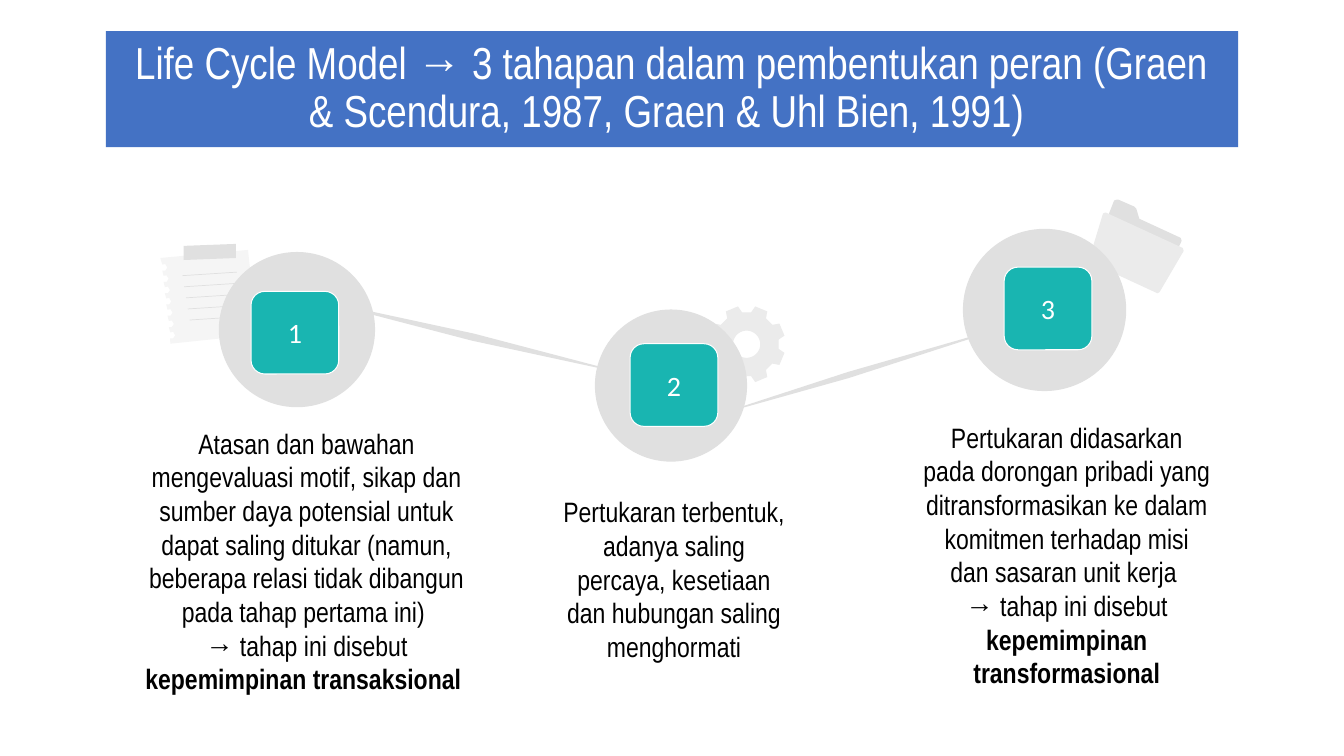
from dataclasses import dataclass
from math import cos, pi, radians, sin

from lxml.etree import SubElement
from pptx import Presentation
from pptx.dml.color import RGBColor
from pptx.enum.shapes import MSO_CONNECTOR, MSO_SHAPE as Preset
from pptx.enum.text import MSO_ANCHOR as Anchor, PP_ALIGN as Align
from pptx.oxml.ns import qn
from pptx.shapes.autoshape import Shape
from pptx.slide import Slide
from pptx.text.text import TextFrame
from pptx.util import Inches, Pt

Point = tuple[float, float]
Box = tuple[float, float, float, float]
Line = tuple[str, str]  # regular text, then bold text


@dataclass(frozen=True)
class Theme:
    banner: str = "4472C4"
    badge: str = "19B5B1"
    grey: str = "E0E0E0"
    light: str = "EBEBEB"
    paper: str = "F5F5F5"
    white: str = "FFFFFF"
    black: str = "000000"
    text_font: str = "Arial Narrow"
    badge_font: str = "Calibri"
    title_size: int = 32
    body_size: int = 20


@dataclass(frozen=True)
class Stage:
    number: str
    circle: Box
    badge: Point
    text: Box
    lines: tuple[Line, ...]


THEME = Theme()
BADGE_SIZE = (0.87, 0.82)
TITLE = ("Life Cycle Model → 3 tahapan dalam pembentukan peran "
         "(Graen & Scendura, 1987, Graen & Uhl Bien, 1991) ")
STAGES = (
    Stage("1", (2.17, 2.5, 1.55, 1.54), (2.49, 2.89), (1.28, 4.1, 3.52, 1.24), (
        ("Atasan dan bawahan mengevaluasi motif, sikap dan sumber daya potensial untuk "
         "dapat saling ditukar (namun, beberapa relasi tidak dibangun pada tahap pertama ini) ", ""),
        ("→ tahap ini disebut ", "kepemimpinan transaksional "))),
    Stage("2", (5.9, 3.07, 1.51, 1.51), (6.25, 3.41), (5.45, 4.78, 2.47, 1.24), (
        ("Pertukaran terbentuk, adanya saling percaya, kesetiaan dan hubungan saling menghormati", ""),)),
    Stage("3", (9.55, 2.27, 1.62, 1.61), (9.96, 2.65), (9.02, 4.04, 3.12, 1.24), (
        ("Pertukaran didasarkan pada dorongan pribadi yang ditransformasikan ke dalam "
         "komitmen terhadap misi dan sasaran unit kerja ", ""),
        ("→ tahap ini disebut ", "kepemimpinan transformasional"))),
)
FOLDER_BACK = [(11.08, 1.98), (11.05, 1.99), (10.91, 2.35), (10.93, 2.39), (11.57, 2.68),
               (11.59, 2.67), (11.72, 2.39), (11.71, 2.36), (11.32, 2.18), (11.3, 2.17),
               (11.27, 2.07), (11.25, 2.05), (11.09, 1.98)]
FOLDER_FRONT = [(10.96, 2.11), (10.94, 2.12), (10.8, 2.58), (10.81, 2.6), (11.48, 2.91),
                (11.5, 2.9), (11.74, 2.49), (11.73, 2.46), (10.97, 2.11)]
NOTE_CLIP = [(2.34, 2.42), (1.82, 2.44), (1.82, 2.58), (2.34, 2.56)]
LINKS = (
    [(3.31, 3.01), (3.3, 3.02), (4.68, 3.38), (6.07, 3.68), (6.07, 3.67), (4.7, 3.31)],
    [(9.8, 3.29), (8.41, 3.69), (7.03, 4.14), (8.42, 3.75), (9.81, 3.3)],
)


def paint(shape: Shape, colour: str) -> None:
    shape.shadow.inherit = False
    shape.fill.solid()
    shape.fill.fore_color.rgb = RGBColor.from_string(colour)
    shape.line.fill.background()


def add_preset(slide: Slide, preset: Preset, box: Box, colour: str) -> Shape:
    shape = slide.shapes.add_shape(preset, *map(Inches, box))
    paint(shape, colour)
    return shape


def add_outline(slide: Slide, colour: str, *contours: list[Point]) -> None:
    first, *others = [[(Inches(x), Inches(y)) for x, y in points] for points in contours]
    builder = slide.shapes.build_freeform(*first[0])
    builder.add_line_segments(first[1:])
    for points in others:
        builder.move_to(*points[0])
        builder.add_line_segments(points[1:])
    paint(builder.convert_to_shape(), colour)


def write(frame: TextFrame, lines: tuple[Line, ...], font: str, size: int, colour: str,
          anchor: Anchor, margin: float, spacing: float = 1.0) -> None:
    frame.word_wrap = True
    frame.vertical_anchor = anchor
    frame.margin_left = frame.margin_right = Inches(margin)
    frame.margin_top = frame.margin_bottom = Inches(margin)
    for index, (regular, bold) in enumerate(lines):
        paragraph = frame.add_paragraph() if index else frame.paragraphs[0]
        paragraph.alignment = Align.CENTER
        paragraph.line_spacing = spacing
        paragraph.font.name = font
        paragraph.font.size = Pt(size)
        paragraph.font.color.rgb = RGBColor.from_string(colour)
        paragraph.add_run().text = regular
        if bold:
            run = paragraph.add_run()
            run.text = bold
            run.font.bold = True


def add_notebook(slide: Slide) -> None:
    # Sheet with seven holes torn along its left edge
    sheet = [(2.55, 3.32), (2.46, 2.48), (1.59, 2.56)]
    for hole in range(7):
        x, y = 1.61 + 0.013 * hole, 2.655 + 0.112 * hole
        sheet += [(x, y - 0.03), (x + 0.03, y - 0.035), (x + 0.05, y),
                  (x + 0.03, y + 0.03), (x, y + 0.03)]
    add_outline(slide, THEME.paper, sheet + [(1.69, 3.41)])
    add_outline(slide, THEME.grey, NOTE_CLIP)
    # Ruled lines
    for row in range(5):
        x, y = 1.81 + 0.0175 * row, 2.735 + 0.11 * row
        ends = map(Inches, (x, y, x + 0.54, y - 0.035))
        rule = slide.shapes.add_connector(MSO_CONNECTOR.STRAIGHT, *ends)
        rule.line.color.rgb = RGBColor.from_string(THEME.grey)
        rule.line.width = Pt(0.5)
        SubElement(rule._element.spPr, qn("a:effectLst"))


def add_gear(slide: Slide, x: float, y: float, teeth: int = 8) -> None:
    step = 360 / teeth
    tooth = ((-14.4, 0.32), (-9.7, 0.385), (9.7, 0.385), (14.4, 0.32))
    rim = [(x + radius * cos(radians((index + 0.5) * step + turn)),
            y + radius * sin(radians((index + 0.5) * step + turn)))
           for index in range(teeth) for turn, radius in tooth]
    hole = [(x + 0.135 * cos(pi * index / 20), y - 0.135 * sin(pi * index / 20))
            for index in range(40)]
    add_outline(slide, THEME.light, rim, hole)


def add_stage(slide: Slide, stage: Stage) -> None:
    add_preset(slide, Preset.OVAL, stage.circle, THEME.grey)
    badge = add_preset(slide, Preset.ROUNDED_RECTANGLE, stage.badge + BADGE_SIZE, THEME.badge)
    badge.line.color.rgb = RGBColor.from_string(THEME.white)
    badge.line.width = Pt(0.75)
    write(badge.text_frame, ((stage.number, ""),), THEME.badge_font, THEME.body_size,
          THEME.white, Anchor.MIDDLE, 0.1)
    caption = slide.shapes.add_textbox(*map(Inches, stage.text))
    write(caption.text_frame, stage.lines, THEME.text_font, THEME.body_size,
          THEME.black, Anchor.TOP, 0.13)


def main() -> None:
    presentation = Presentation()
    presentation.slide_width, presentation.slide_height = Inches(13.33), Inches(7.5)
    slide = presentation.slides.add_slide(presentation.slide_layouts[6])

    # Title banner
    banner = add_preset(slide, Preset.RECTANGLE, (1.05, 0.31, 11.23, 1.15), THEME.banner)
    write(banner.text_frame, ((TITLE, ""),), THEME.text_font, THEME.title_size,
          THEME.white, Anchor.MIDDLE, 0.13, 0.9)

    # Icons behind the circles
    add_outline(slide, THEME.grey, FOLDER_BACK)
    add_outline(slide, THEME.light, FOLDER_FRONT)
    add_notebook(slide)
    add_gear(slide, 7.405, 3.415)

    # Tapered links, then the three stages
    for link in LINKS:
        add_outline(slide, THEME.grey, link)
    for stage in STAGES:
        add_stage(slide, stage)

    presentation.save("out.pptx")


if __name__ == "__main__":
    main()
